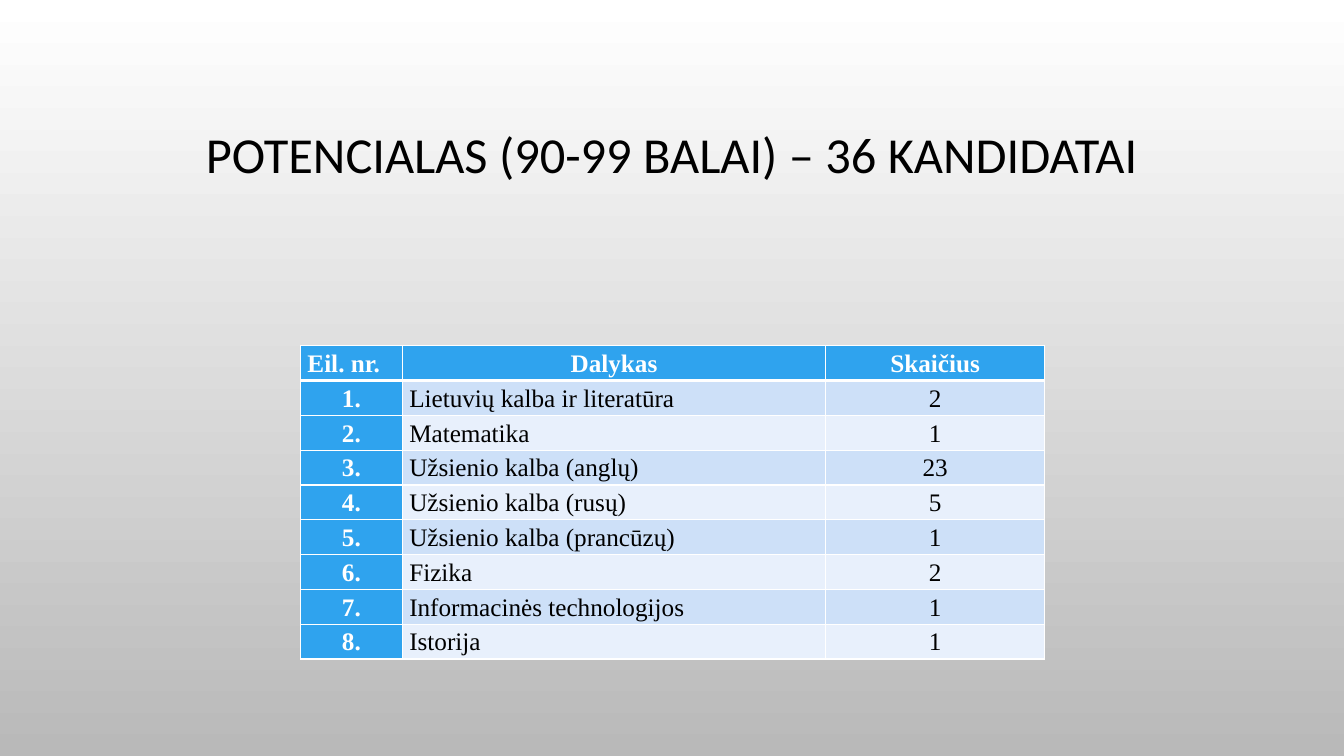
from dataclasses import dataclass

from lxml import etree
from pptx import Presentation
from pptx.dml.color import RGBColor
from pptx.enum.text import MSO_ANCHOR, PP_ALIGN
from pptx.oxml.ns import qn
from pptx.util import Inches, Pt

LEFT, CENTER = PP_ALIGN.LEFT, PP_ALIGN.CENTER
MIDDLE = MSO_ANCHOR.MIDDLE


@dataclass(frozen=True)
class Theme:
    black: str = "000000"
    white: str = "FFFFFF"
    backdrop_end: str = "B9B9B9"
    accent: str = "2FA3EE"
    bands: tuple = ("CDE0F8", "E8F0FC")
    title_font: str = "Calibri"
    table_font: str = "Times New Roman"
    title_size: int = 36
    table_size: int = 18
    rule: int = 1
    header_rule: int = 3


theme = Theme()


def style_font(paragraph, name, size, color, bold=False):
    font = paragraph.font
    font.name, font.size, font.bold = name, Pt(size), bold
    font.color.rgb = RGBColor.from_string(color)


def add_border(cell, side, width):
    line = etree.SubElement(cell._tc.get_or_add_tcPr(), qn(f"a:ln{side}"), w=str(Pt(width)))
    fill = etree.SubElement(line, qn("a:solidFill"))
    etree.SubElement(fill, qn("a:srgbClr"), val=theme.white)


prs = Presentation()
prs.slide_width, prs.slide_height = Inches(13.33), Inches(7.5)
slide = prs.slides.add_slide(prs.slide_layouts[6])

# Background: white at the top to grey at the bottom
backdrop = slide.background.fill
backdrop.gradient()
backdrop.gradient_angle = 270
for stop, color in zip(backdrop.gradient_stops, (theme.white, theme.backdrop_end)):
    stop.color.rgb = RGBColor.from_string(color)

# Title
title = slide.shapes.add_textbox(Inches(1), Inches(0.68), Inches(11.33), Inches(1.75)).text_frame
title.word_wrap = True
title.vertical_anchor = MIDDLE
heading = title.paragraphs[0]
heading.text = "POTENCIALAS (90-99 BALAI) – 36 KANDIDATAI"
heading.alignment = CENTER
heading.line_spacing = 0.9
style_font(heading, theme.title_font, theme.title_size, theme.black)

# Candidates per subject
subjects = [
    ("Lietuvių kalba ir literatūra", 2),
    ("Matematika", 1),
    ("Užsienio kalba (anglų)", 23),
    ("Užsienio kalba (rusų)", 5),
    ("Užsienio kalba (prancūzų)", 1),
    ("Fizika", 2),
    ("Informacinės technologijos", 1),
    ("Istorija", 1),
]
rows = [("Eil. nr.", "Dalykas", "Skaičius")]
rows += [(f"{number}.", subject, str(count)) for number, (subject, count) in enumerate(subjects, 1)]
column_widths = (1.01, 4.2, 2.17)
table_height = 2.86

table = slide.shapes.add_table(
    len(rows), len(column_widths),
    Inches(2.98), Inches(3.43), Inches(sum(column_widths)), Inches(table_height),
).table
for column, width in zip(table.columns, column_widths):
    column.width = Inches(width)

for r, row in enumerate(rows):
    table.rows[r].height = Inches(table_height / len(rows))
    for c, text in enumerate(row):
        cell = table.cell(r, c)
        cell.margin_left = cell.margin_right = Inches(0.07)
        cell.margin_top = cell.margin_bottom = 0

        # The rule between the header and the body is heavier
        top = theme.header_rule if r == 1 else theme.rule
        bottom = theme.header_rule if r == 0 else theme.rule
        for side, width in (("L", theme.rule), ("R", theme.rule), ("T", top), ("B", bottom)):
            add_border(cell, side, width)

        is_heading = r == 0 or c == 0
        cell.fill.solid()
        cell.fill.fore_color.rgb = RGBColor.from_string(
            theme.accent if is_heading else theme.bands[(r - 1) % 2])

        entry = cell.text_frame.paragraphs[0]
        entry.text = text
        entry.alignment = LEFT if (r == 0 and c == 0) or (r > 0 and c == 1) else CENTER
        entry.line_spacing = 1.15
        entry.space_after = Pt(10)
        style_font(entry, theme.table_font, theme.table_size,
                   theme.white if is_heading else theme.black, is_heading)

prs.save("out.pptx")
